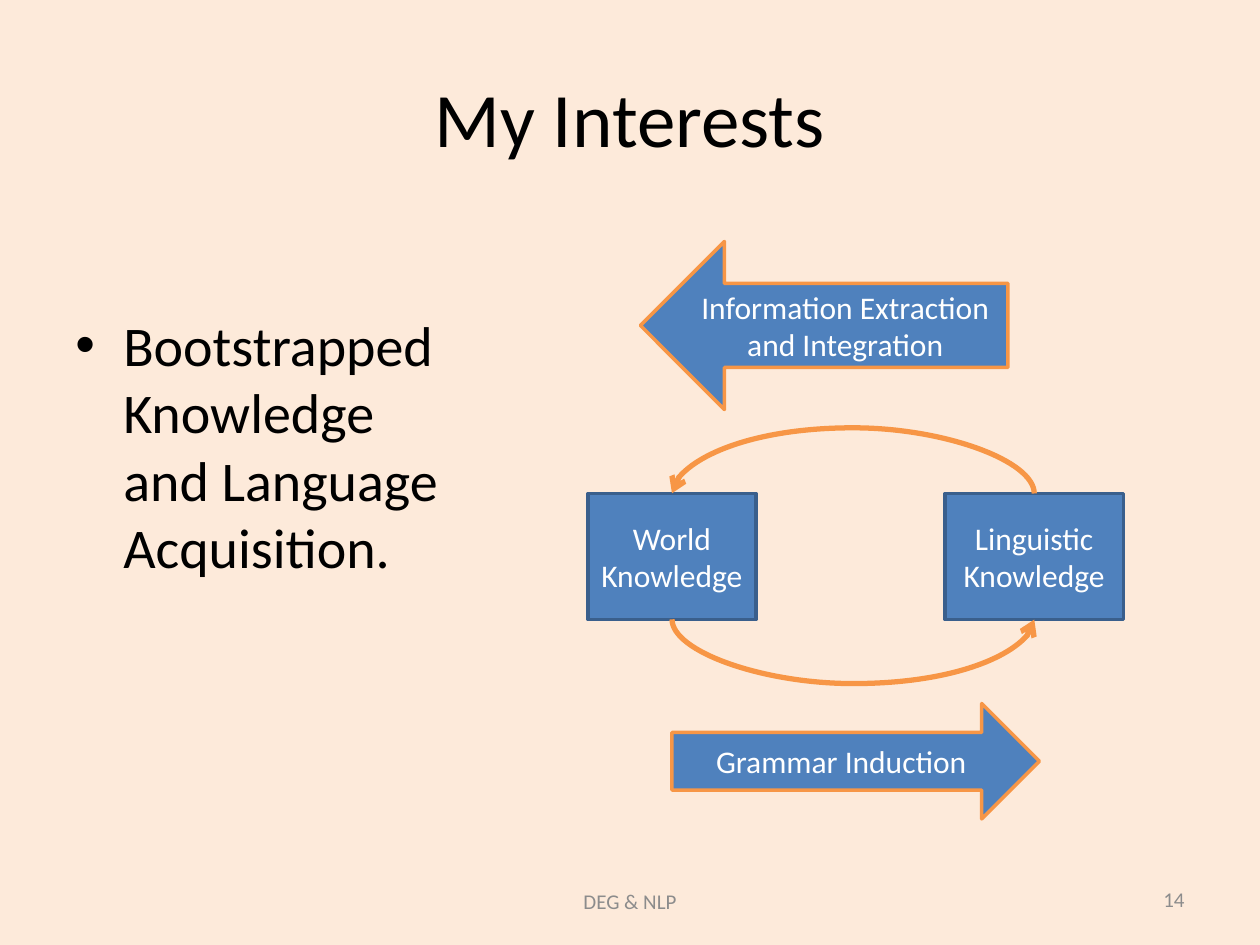
import pptx
import pptx.dml.color
import pptx.enum.shapes
import pptx.enum.text
import pptx.oxml
import pptx.oxml.ns
import pptx.util

COLORS = {
    "background": "FDEADA",
    "text": "000000",
    "footer": "8C8C8C",
    "fill": "4F81BD",
    "box_line": "3A5F8C",
    "accent": "F79646",
    "light": "FFFFFF",
}
SHAPES = pptx.enum.shapes.MSO_SHAPE
ALIGN = pptx.enum.text.PP_ALIGN
ANCHOR = pptx.enum.text.MSO_ANCHOR
TOP, BOTTOM = 0, 2


def color(name):
    return pptx.dml.color.RGBColor.from_string(COLORS[name])


def grid(cells):
    """Convert grid cells, twelve to the inch, to a length."""
    return pptx.util.Inches(cells / 12)


def add_xml(parent, tag, **attributes):
    element = pptx.oxml.parse_xml(f"<a:{tag} {pptx.oxml.ns.nsdecls('a')}/>")
    for name, value in attributes.items():
        element.set(name, value)
    parent.append(element)


def write(shape, text, size=18, ink="light", align=ALIGN.CENTER,
          anchor=ANCHOR.MIDDLE, bullet=None):
    frame = shape.text_frame
    frame.word_wrap = True
    frame.vertical_anchor = anchor
    paragraph = frame.paragraphs[0]
    paragraph.alignment = align
    run = paragraph.add_run()
    run.text = text
    run.font.name = "Calibri"
    run.font.size = pptx.util.Pt(size)
    run.font.color.rgb = color(ink)
    if bullet:
        paragraph.space_before = pptx.util.Pt(size * 0.2)
        properties = paragraph._p.get_or_add_pPr()
        indent = pptx.util.Inches(0.38)
        properties.set("marL", str(indent))
        properties.set("indent", str(-indent))
        add_xml(properties, "buFont", typeface="Arial")
        add_xml(properties, "buChar", char=bullet)


class Diagram:
    """Adds styled elements to one slide; places are in grid cells."""

    def __init__(self, slide):
        self.slide = slide
        background = slide.background.fill
        background.solid()
        background.fore_color.rgb = color("background")

    def text(self, text, left, top, width, height, **style):
        box = self.slide.shapes.add_textbox(*map(grid, (left, top, width, height)))
        write(box, text, **style)

    def block(self, kind, text, left, top, width, height, line="accent"):
        shape = self.slide.shapes.add_shape(
            kind, *map(grid, (left, top, width, height)))
        shape.shadow.inherit = False
        shape.fill.solid()
        shape.fill.fore_color.rgb = color("fill")
        shape.line.color.rgb = color(line)
        shape.line.width = pptx.util.Pt(2)
        write(shape, text)
        return shape

    def arc(self, start, end, side, bulge, flip):
        """Join the same side of two boxes with an arc that bows outwards."""
        connector = self.slide.shapes.add_connector(
            pptx.enum.shapes.MSO_CONNECTOR.CURVE, 0, 0, 0, 0)
        connector.begin_connect(start, side)
        connector.end_connect(end, side)
        connector.line.color.rgb = color("accent")
        connector.line.width = pptx.util.Pt(3)
        add_xml(connector.line._get_or_add_ln(), "tailEnd", type="arrow")
        properties = connector._element.spPr
        add_xml(properties, "effectLst")

        # The connector lies in a thin upright frame, turned by 270 degrees.
        span = abs(connector.end_x - connector.begin_x)
        middle = (connector.begin_x + connector.end_x) // 2
        level = connector.begin_y
        thickness = 1588
        connector.left, connector.top = middle - thickness // 2, level - span // 2
        connector.width, connector.height = thickness, span
        frame = properties.xfrm
        for name in ("flipH", "flipV"):
            frame.set(name, "1" if name == flip else "0")
        frame.set("rot", str(270 * 60000))
        guides = properties.prstGeom.get_or_add_avLst()
        share = round(grid(bulge) / thickness * 100000)
        add_xml(guides, "gd", name="adj1", fmla=f"val {share}")


def main():
    presentation = pptx.Presentation()
    presentation.slide_width = grid(120)
    presentation.slide_height = grid(90)
    slide = presentation.slides.add_slide(presentation.slide_layouts[6])
    diagram = Diagram(slide)

    diagram.text("My Interests", 6, 3.6, 108, 15, size=44, ink="text")
    diagram.text("Bootstrapped Knowledge and Language Acquisition.",
                 6, 29, 39, 51.4, size=32, ink="text", align=ALIGN.LEFT,
                 anchor=ANCHOR.TOP, bullet="•")
    diagram.text("DEG & NLP", 41, 83.4, 38, 4.8, size=12, ink="footer")
    diagram.text("14", 86, 83.2, 28, 4.8, size=12, ink="footer", align=ALIGN.RIGHT)

    world = diagram.block(SHAPES.RECTANGLE, "World Knowledge",
                          56, 47, 16, 12, line="box_line")
    linguistic = diagram.block(SHAPES.RECTANGLE, "Linguistic Knowledge",
                               90, 47, 17, 12, line="box_line")
    diagram.block(SHAPES.RIGHT_ARROW, "Grammar Induction", 64, 67, 35, 11)
    diagram.block(SHAPES.LEFT_ARROW, "Information Extraction and Integration",
                  61, 23, 35, 16)
    diagram.arc(linguistic, world, TOP, 6.9, "flipV")
    diagram.arc(world, linguistic, BOTTOM, 6.75, "flipH")

    presentation.save("out.pptx")


if __name__ == "__main__":
    main()
